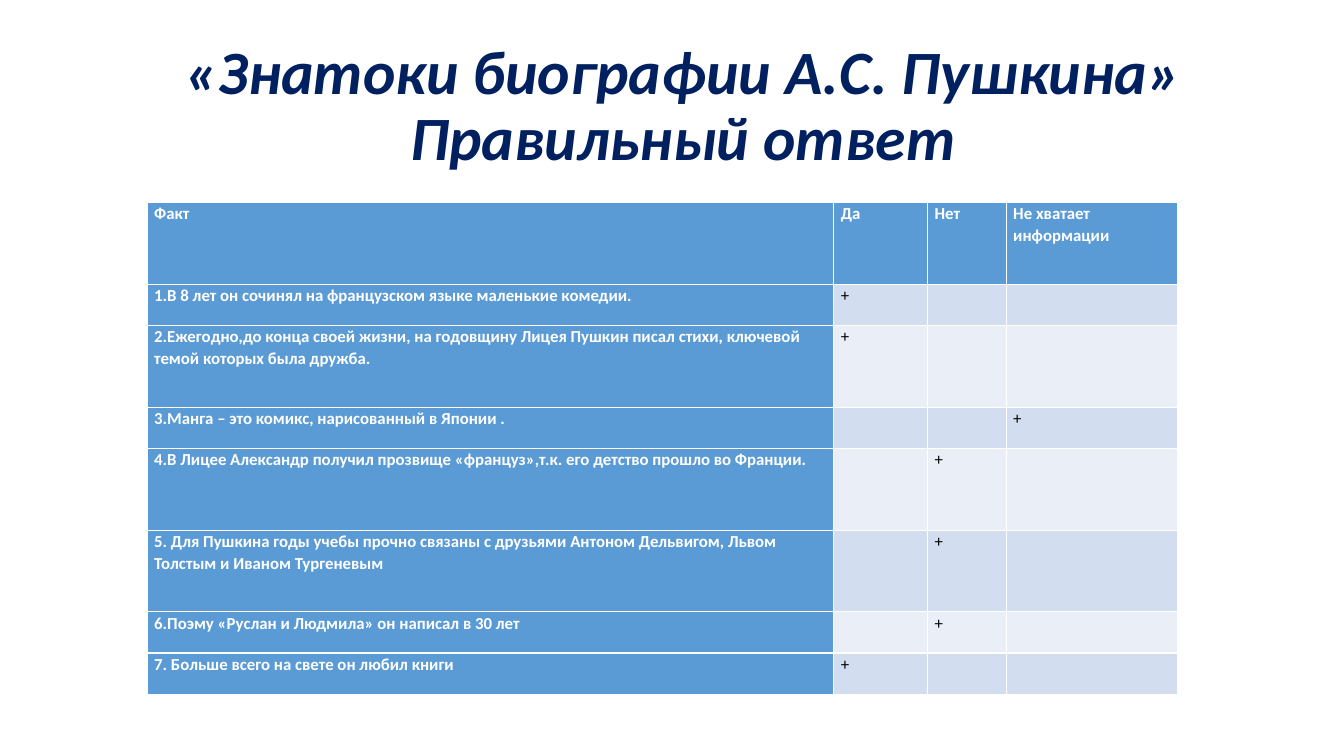
from dataclasses import dataclass
from typing import Optional

from pptx import Presentation
from pptx.dml.color import RGBColor
from pptx.enum.text import MSO_ANCHOR, PP_ALIGN
from pptx.util import Emu, Pt

EMU_PER_PX = 9144


@dataclass(frozen=True)
class Theme:
    font: str = "Calibri"
    title_size: int = 44
    table_size: int = 12
    title: str = "002060"
    heading: str = "5B9BD5"
    heading_text: str = "FFFFFF"
    mark_text: str = "000000"
    bands: tuple[str, str] = ("D2DEEF", "EAEFF7")


@dataclass(frozen=True)
class Fact:
    text: str
    answer: str
    height: int


THEME = Theme()
ANSWERS = ["Да", "Нет", "Не хватает информации"]
YES, NO, UNKNOWN = ANSWERS
COLUMN_WIDTHS = [681, 93, 78, 170]
SHORT, TALL = 41, 81
FACTS = [
    Fact("1.В 8 лет он сочинял на французском языке маленькие комедии.", YES, SHORT),
    Fact("2.Ежегодно,до конца своей жизни, на годовщину Лицея Пушкин писал стихи, "
         "ключевой темой которых была дружба.", YES, TALL),
    Fact("3.Манга – это комикс, нарисованный в Японии .", UNKNOWN, SHORT),
    Fact("4.В Лицее Александр получил прозвище «француз»,т.к. его детство прошло "
         "во Франции.", NO, TALL),
    Fact("5. Для Пушкина годы учебы прочно связаны с друзьями Антоном Дельвигом, "
         "Львом Толстым и Иваном Тургеневым", NO, TALL),
    Fact("6.Поэму «Руслан и Людмила» он написал в 30 лет", NO, SHORT),
    Fact("7. Больше всего на свете он любил книги", YES, SHORT),
]


def px(length: int) -> Emu:
    return Emu(length * EMU_PER_PX)


def style_paragraph(paragraph, size: int, color: str, spacing: float,
                    bold: bool, italic: Optional[bool] = None) -> None:
    paragraph.line_spacing = spacing
    font = paragraph.font
    font.name = THEME.font
    font.size = Pt(size)
    font.bold = bold
    font.italic = italic
    font.color.rgb = RGBColor.from_string(color)


def fill_cell(cell, text: str, fill: str, heading: bool) -> None:
    cell.fill.solid()
    cell.fill.fore_color.rgb = RGBColor.from_string(fill)
    cell.margin_left = cell.margin_right = px(7)
    cell.margin_top = cell.margin_bottom = 0
    cell.text = text
    color = THEME.heading_text if heading else THEME.mark_text
    style_paragraph(cell.text_frame.paragraphs[0], THEME.table_size, color, 1.07, heading)


def add_title(slide, text: str) -> None:
    frame = slide.shapes.add_textbox(px(61), px(34), px(1234), px(145)).text_frame
    frame.word_wrap = True
    frame.vertical_anchor = MSO_ANCHOR.MIDDLE
    heading = frame.paragraphs[0]
    heading.text = text
    heading.alignment = PP_ALIGN.CENTER
    style_paragraph(heading, THEME.title_size, THEME.title, 0.9, True, True)


def add_answer_table(slide) -> None:
    heights = [TALL] + [fact.height for fact in FACTS]
    table = slide.shapes.add_table(
        len(heights), len(COLUMN_WIDTHS), px(146), px(201),
        px(sum(COLUMN_WIDTHS)), px(sum(heights))).table
    table.first_col = True
    for column, width in zip(table.columns, COLUMN_WIDTHS):
        column.width = px(width)
    for row, height in zip(table.rows, heights):
        row.height = px(height)
    for column, label in enumerate(["Факт"] + ANSWERS):
        fill_cell(table.cell(0, column), label, THEME.heading, True)
    for row, fact in enumerate(FACTS, start=1):
        fill_cell(table.cell(row, 0), fact.text, THEME.heading, True)
        band = THEME.bands[(row - 1) % 2]
        for column, answer in enumerate(ANSWERS, start=1):
            mark = "+" if answer == fact.answer else ""
            fill_cell(table.cell(row, column), mark, band, False)


def main() -> None:
    deck = Presentation()
    deck.slide_width, deck.slide_height = px(1333), px(750)
    slide = deck.slides.add_slide(deck.slide_layouts[6])
    add_title(slide, "«Знатоки биографии А.С. Пушкина»\vПравильный ответ")
    add_answer_table(slide)
    deck.save("out.pptx")


if __name__ == "__main__":
    main()
